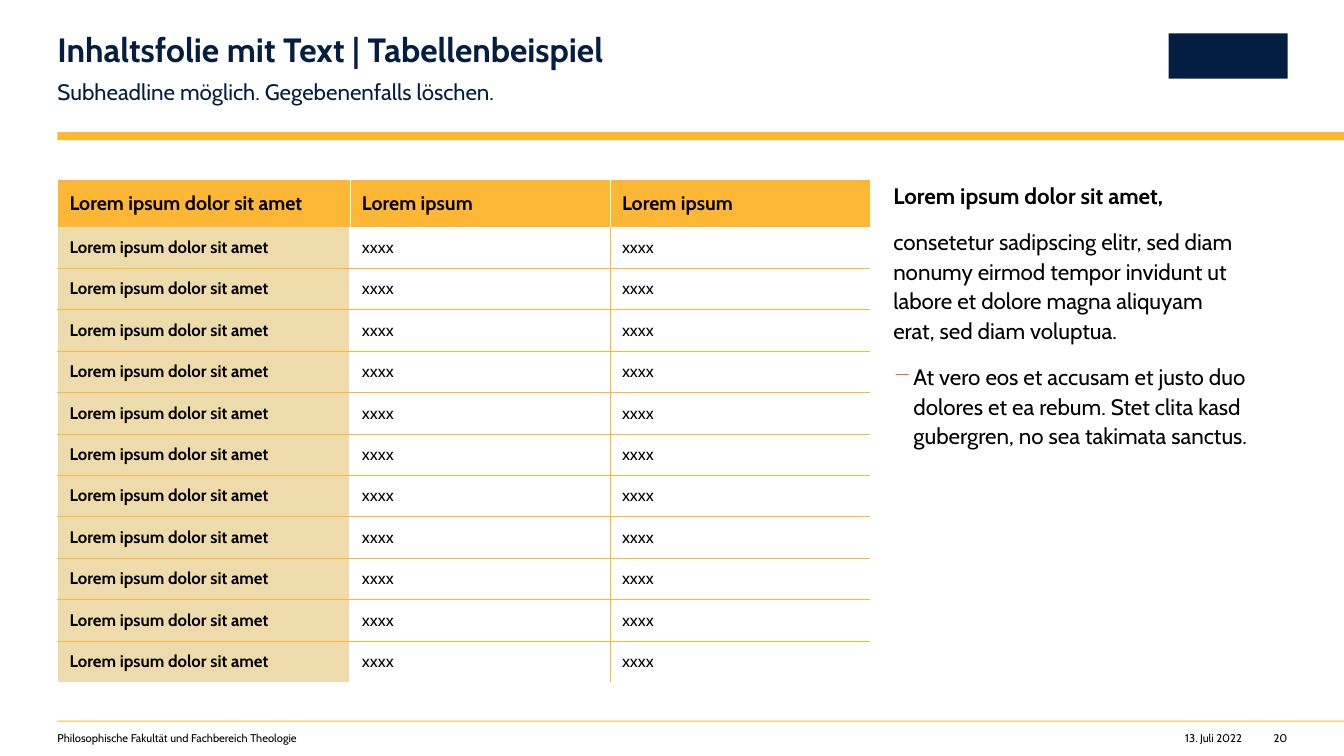
from dataclasses import dataclass
from typing import Optional

from lxml import etree
from pptx import Presentation
from pptx import util as u
from pptx.dml.color import RGBColor
from pptx.enum import shapes, text
from pptx.oxml import ns

FONT = "Cabin"
GOLD = RGBColor(0xFD, 0xB7, 0x35)
SAND = RGBColor(0xEE, 0xDB, 0xAC)
NAVY = RGBColor(0x04, 0x1E, 0x42)
ORANGE = RGBColor(0xE4, 0x6D, 0x41)
BLACK = RGBColor(0, 0, 0)
WHITE = RGBColor(0xFF, 0xFF, 0xFF)

LEFT = 0.57
CONTENT_TOP = 1.78
BODY_ROWS = 11
HEADER_HEIGHT = 0.47
TABLE_HEIGHT = 4.99
COLUMN_WIDTHS = (2.9, 2.58, 2.58)
HEADER_CELLS = ("Lorem ipsum dolor sit amet", "Lorem ipsum", "Lorem ipsum")
BODY_CELLS = ("Lorem ipsum dolor sit amet", "xxxx", "xxxx")


@dataclass(frozen=True)
class Box:
    left: float
    top: float
    width: float
    height: float

    def lengths(self) -> tuple:
        return tuple(u.Inches(v) for v in (self.left, self.top, self.width, self.height))


@dataclass(frozen=True)
class Block:
    """One paragraph of text with its look."""
    words: str
    size: float
    color: RGBColor = BLACK
    bold: bool = False
    line_spacing: Optional[float] = None
    space_after: float = 0
    align: text.PP_ALIGN = text.PP_ALIGN.LEFT
    bullet: str = ""


@dataclass(frozen=True)
class TextArea:
    box: Box
    blocks: tuple
    right_inset: float = 0
    wrap: bool = True
    grow: bool = True


@dataclass(frozen=True)
class Border:
    color: RGBColor
    points: float


THIN_GOLD = Border(GOLD, 0.25)
THIN_WHITE = Border(WHITE, 0.5)
WIDE_WHITE = Border(WHITE, 1)

BARS = (
    (Box(LEFT, 1.31, 12.77, 0.08), GOLD),
    (Box(LEFT, 7.15, 12.77, 0.01), GOLD),
    (Box(11.59, 0.33, 1.18, 0.45), NAVY),  # plain block in the logo's place
)

TEXT_AREAS = (
    TextArea(Box(LEFT, 0.33, 7.49, 0.36),
             (Block("Inhaltsfolie mit Text | Tabellenbeispiel", 24, NAVY, True, 0.9),)),
    TextArea(Box(LEFT, 0.75, 7.49, 0.27),
             (Block("Subheadline möglich. Gegebenenfalls löschen.", 16, NAVY,
                    line_spacing=1.1, space_after=12),), right_inset=0.39),
    TextArea(Box(8.86, CONTENT_TOP, 3.91, 5), (
        Block("Lorem ipsum dolor sit amet,", 16, bold=True, line_spacing=1.1, space_after=12),
        Block("consetetur sadipscing elitr, sed diam nonumy eirmod tempor invidunt ut "
              "labore et dolore magna aliquyam erat, sed diam voluptua.", 16,
              line_spacing=1.1, space_after=12),
        Block("At vero eos et accusam et justo duo dolores et ea rebum. Stet clita kasd "
              "gubergren, no sea takimata sanctus.", 16,
              line_spacing=1.1, space_after=12, bullet="−"),
    ), right_inset=0.39, grow=False),
    TextArea(Box(LEFT, 7.26, 5.98, 0.13),
             (Block("Philosophische Fakultät und Fachbereich Theologie", 8),)),
    TextArea(Box(11.58, 7.26, 0.74, 0.13),
             (Block("13. Juli 2022", 8, align=text.PP_ALIGN.RIGHT),), wrap=False),
    TextArea(Box(12.63, 7.26, 0.14, 0.13),
             (Block("20", 8, align=text.PP_ALIGN.RIGHT),), wrap=False),
)


def add_bar(slide, box: Box, color: RGBColor) -> None:
    shape = slide.shapes.add_shape(shapes.MSO_SHAPE.RECTANGLE, *box.lengths())
    shape.shadow.inherit = False
    shape.fill.solid()
    shape.fill.fore_color.rgb = color
    shape.line.fill.background()


def add_bullet(paragraph, mark: str) -> None:
    properties = paragraph._p.get_or_add_pPr()
    properties.set("marL", str(u.Inches(0.2)))
    properties.set("indent", str(u.Inches(-0.2)))
    color = etree.SubElement(properties, ns.qn("a:buClr"))
    etree.SubElement(color, ns.qn("a:srgbClr"), val=str(ORANGE))
    etree.SubElement(properties, ns.qn("a:buChar"), char=mark)


def write_block(paragraph, block: Block) -> None:
    paragraph.alignment = block.align
    paragraph.space_after = u.Pt(block.space_after)
    if block.line_spacing:
        paragraph.line_spacing = block.line_spacing
    if block.bullet:
        add_bullet(paragraph, block.bullet)
    run = paragraph.add_run()
    run.text = block.words
    run.font.name = FONT
    run.font.size = u.Pt(block.size)
    run.font.bold = block.bold
    run.font.color.rgb = block.color


def add_text_area(slide, area: TextArea) -> None:
    frame = slide.shapes.add_textbox(*area.box.lengths()).text_frame
    frame.margin_left = frame.margin_top = frame.margin_bottom = 0
    frame.margin_right = u.Inches(area.right_inset)
    frame.word_wrap = area.wrap
    frame.auto_size = (text.MSO_AUTO_SIZE.SHAPE_TO_FIT_TEXT if area.grow
                       else text.MSO_AUTO_SIZE.NONE)
    for index, block in enumerate(area.blocks):
        paragraph = frame.add_paragraph() if index else frame.paragraphs[0]
        write_block(paragraph, block)


def set_border(cell, side: str, border: Optional[Border]) -> None:
    line = etree.SubElement(cell._tc.get_or_add_tcPr(), ns.qn(f"a:ln{side}"))
    if border is None:
        etree.SubElement(line, ns.qn("a:noFill"))
        return
    line.set("w", str(u.Pt(border.points)))
    fill = etree.SubElement(line, ns.qn("a:solidFill"))
    etree.SubElement(fill, ns.qn("a:srgbClr"), val=str(border.color))


def cell_borders(row: int, column: int) -> dict:
    """Borders in the order L, R, T, B; shared edges agree on both sides."""
    inner = (THIN_WHITE, THIN_WHITE) if row == 0 else (WIDE_WHITE, THIN_GOLD)
    verticals = (WIDE_WHITE, *inner, None)
    return {
        "L": verticals[column],
        "R": verticals[column + 1],
        "T": WIDE_WHITE if row == 0 else THIN_GOLD if row > 1 else None,
        "B": THIN_GOLD if 0 < row < BODY_ROWS else None,
    }


def fill_cell(cell, row: int, column: int, words: str) -> None:
    cell.margin_left = cell.margin_right = u.Inches(0.12)
    cell.margin_top = cell.margin_bottom = u.Inches(0.04)
    cell.vertical_anchor = text.MSO_ANCHOR.MIDDLE
    for side, border in cell_borders(row, column).items():
        set_border(cell, side, border)
    if row == 0 or column == 0:
        cell.fill.solid()
        cell.fill.fore_color.rgb = GOLD if row == 0 else SAND
    else:
        cell.fill.background()
    write_block(cell.text_frame.paragraphs[0],
                Block(words, 14 if row == 0 else 12, bold=row == 0 or column == 0))


def add_example_table(slide) -> None:
    box = Box(LEFT, CONTENT_TOP, sum(COLUMN_WIDTHS), TABLE_HEIGHT)
    table = slide.shapes.add_table(BODY_ROWS + 1, len(COLUMN_WIDTHS), *box.lengths()).table
    table.first_row = table.horz_banding = False
    for column, width in zip(table.columns, COLUMN_WIDTHS):
        column.width = u.Inches(width)
    body_height = (TABLE_HEIGHT - HEADER_HEIGHT) / BODY_ROWS
    for row, table_row in enumerate(table.rows):
        table_row.height = u.Inches(body_height if row else HEADER_HEIGHT)
        for column, words in enumerate(BODY_CELLS if row else HEADER_CELLS):
            fill_cell(table.cell(row, column), row, column, words)


def main() -> None:
    presentation = Presentation()
    presentation.slide_width = u.Inches(13.33)
    presentation.slide_height = u.Inches(7.5)
    slide = presentation.slides.add_slide(presentation.slide_layouts[6])
    for box, color in BARS:
        add_bar(slide, box, color)
    add_example_table(slide)
    for area in TEXT_AREAS:
        add_text_area(slide, area)
    presentation.save("out.pptx")


if __name__ == "__main__":
    main()
